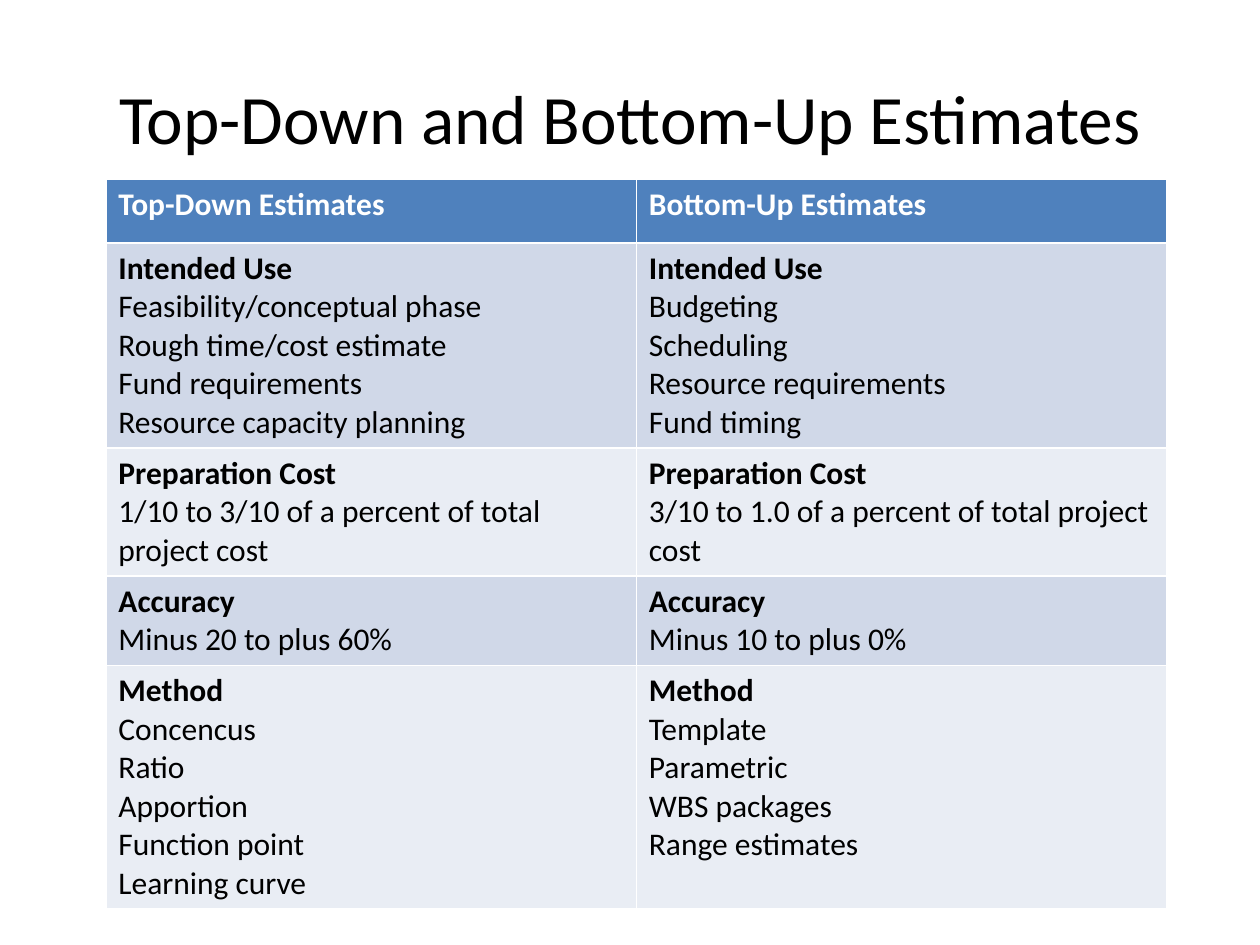
from pptx import Presentation
from pptx.dml.color import RGBColor
from pptx.enum.text import MSO_ANCHOR, PP_ALIGN
from pptx.util import Inches, Pt

COLORS = {
    "header": "4F81BD",
    "dark_band": "D0D8E8",
    "light_band": "E9EDF4",
    "white": "FFFFFF",
    "black": "000000",
}


def write_text(paragraph, text, size=18, bold=False, color="black", align=PP_ALIGN.LEFT):
    paragraph.alignment = align
    run = paragraph.add_run()
    run.text = text
    run.font.name = "Calibri"
    run.font.size = Pt(size)
    run.font.bold = bold
    run.font.color.rgb = RGBColor.from_string(COLORS[color])


presentation = Presentation()
presentation.slide_width = Inches(10)
presentation.slide_height = Inches(7.5)
slide = presentation.slides.add_slide(presentation.slide_layouts[5])

title = slide.shapes.title
title.left, title.top = Inches(0.5), Inches(0.3)
title.width, title.height = Inches(9), Inches(1.25)
title.text_frame.vertical_anchor = MSO_ANCHOR.MIDDLE
write_text(title.text_frame.paragraphs[0], "Top-Down and Bottom-Up Estimates",
           size=39.6, align=PP_ALIGN.CENTER)

estimate_rows = [
    (["Top-Down Estimates"], ["Bottom-Up Estimates"]),
    (["Intended Use", "Feasibility/conceptual phase", "Rough time/cost estimate",
      "Fund requirements", "Resource capacity planning"],
     ["Intended Use", "Budgeting", "Scheduling", "Resource requirements", "Fund timing"]),
    (["Preparation Cost", "1/10 to 3/10 of a percent of total project cost"],
     ["Preparation Cost", "3/10 to 1.0 of a percent of total project cost"]),
    (["Accuracy", "Minus 20 to plus 60%"],
     ["Accuracy", "Minus 10 to plus 0%"]),
    (["Method", "Concencus", "Ratio", "Apportion", "Function point", "Learning curve"],
     ["Method", "Template", "Parametric", "WBS packages", "Range estimates"]),
]

table_frame = slide.shapes.add_table(len(estimate_rows), 2, Inches(0.84), Inches(1.42),
                                     Inches(8.42), Inches(5.71))
table = table_frame.table
for row in table.rows:
    row.height = Inches(0.51)
table_frame.height = Inches(5.71)

for row_index, row_cells in enumerate(estimate_rows):
    is_header = row_index == 0
    band = "header" if is_header else ("light_band", "dark_band")[row_index % 2]
    for column_index, lines in enumerate(row_cells):
        cell = table.cell(row_index, column_index)
        cell.fill.solid()
        cell.fill.fore_color.rgb = RGBColor.from_string(COLORS[band])
        text_frame = cell.text_frame
        for line_index, line in enumerate(lines):
            paragraph = text_frame.add_paragraph() if line_index else text_frame.paragraphs[0]
            write_text(paragraph, line, bold=line_index == 0,
                       color="white" if is_header else "black")

presentation.save("out.pptx")
